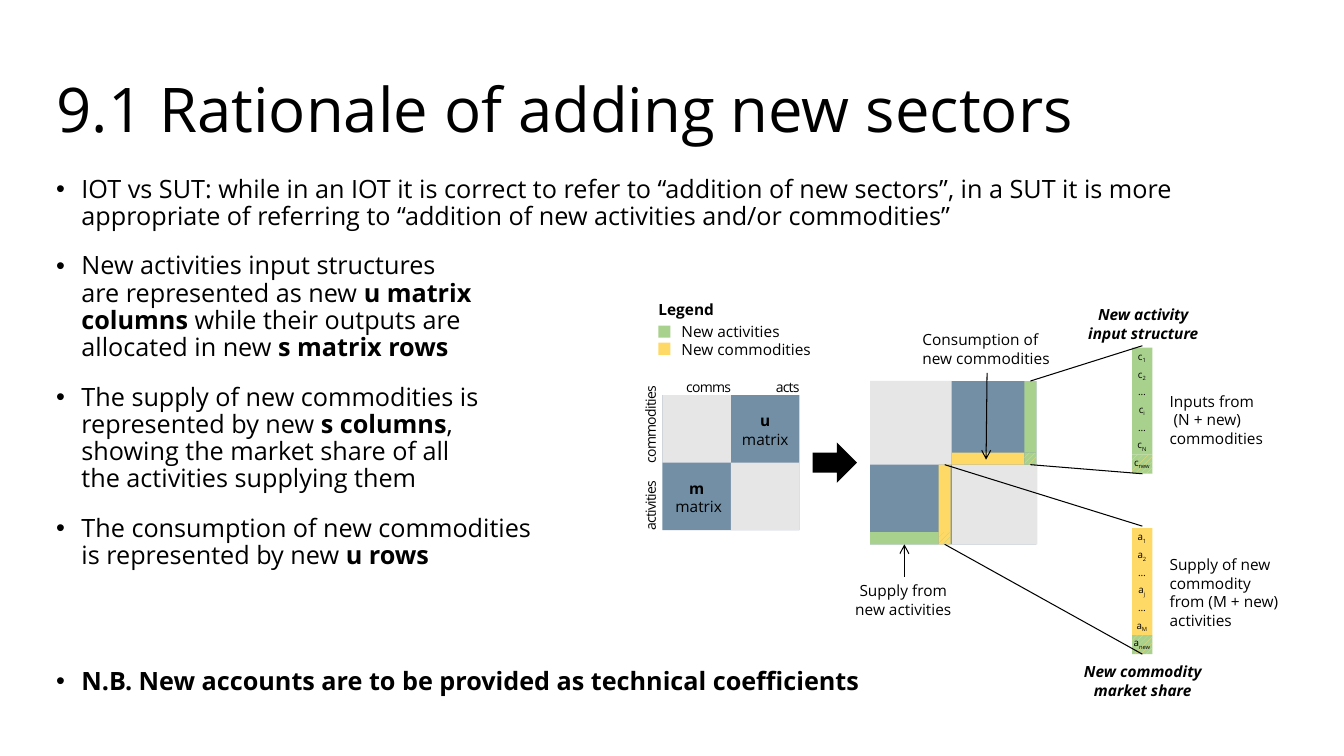
from copy import deepcopy
from dataclasses import dataclass

from lxml.etree import SubElement
from pptx import Presentation
from pptx.dml.color import RGBColor
from pptx.enum.dml import MSO_PATTERN
from pptx.enum.shapes import MSO_CONNECTOR, MSO_SHAPE
from pptx.enum.text import MSO_ANCHOR, MSO_AUTO_SIZE, PP_ALIGN
from pptx.oxml.ns import qn
from pptx.util import Inches, Pt


@dataclass(frozen=True)
class Theme:
    font: str = "Open Sans"
    black: str = "000000"
    blue: str = "728FA5"
    grey: str = "E7E6E6"
    green: str = "A9D18E"
    yellow: str = "FFD966"
    title: int = 44
    body: int = 18
    label: int = 11
    axis: int = 10
    cell: int = 7


@dataclass(frozen=True)
class Span:
    text: str
    bold: bool = False
    italic: bool = False
    subscript: bool = False


class SlideBuilder:
    def __init__(self, page, theme):
        self.page = page
        self.theme = theme

    def add_spans(self, paragraph, spans, size, tracking=None):
        for span in spans:
            for index, line in enumerate(span.text.split("\n")):
                if index:
                    paragraph.add_line_break()
                    line_break = paragraph._p.findall(qn("a:br"))[-1]
                    line_break.append(deepcopy(properties))
                if not line:
                    continue
                run = paragraph.add_run()
                run.text = line
                run.font.name = self.theme.font
                run.font.size = Pt(size)
                run.font.bold = span.bold
                run.font.italic = span.italic
                run.font.color.rgb = RGBColor.from_string(self.theme.black)
                properties = run._r.get_or_add_rPr()
                if span.subscript:
                    properties.set("baseline", "-25000")
                if tracking:
                    properties.set("spc", str(int(tracking * 100)))

    def title(self, text, left, top, width, height):
        box = self.page.shapes.title
        box.left, box.top = Inches(left), Inches(top)
        box.width, box.height = Inches(width), Inches(height)
        frame = box.text_frame
        frame.auto_size = MSO_AUTO_SIZE.NONE
        frame.vertical_anchor = MSO_ANCHOR.BOTTOM
        paragraph = frame.paragraphs[0]
        paragraph.alignment = PP_ALIGN.LEFT
        paragraph.line_spacing = 0.9
        self.add_spans(paragraph, [Span(text)], self.theme.title)

    def frame(self, left, top, width, height, insets=(0.1, 0.05, 0.1, 0.05), rotation=0):
        box = self.page.shapes.add_textbox(Inches(left), Inches(top), Inches(width), Inches(height))
        box.rotation = rotation
        frame = box.text_frame
        frame.word_wrap = True
        frame.margin_left, frame.margin_top, frame.margin_right, frame.margin_bottom = map(Inches, insets)
        return frame

    def label(self, spans, left, top, width, height, size=None, align=PP_ALIGN.LEFT, tracking=None, **layout):
        paragraph = self.frame(left, top, width, height, **layout).paragraphs[0]
        paragraph.alignment = align
        self.add_spans(paragraph, spans, size or self.theme.label, tracking)

    def axis_label(self, text, left, top, width, align=PP_ALIGN.LEFT, rotation=0):
        self.label([Span(text)], left, top, width, 0.17, self.theme.axis, align, -0.5,
                   insets=(0, 0, 0, 0), rotation=rotation)

    def bullets(self, items, left, top, width, height):
        frame = self.frame(left, top, width, height)
        for index, (space_before, spans) in enumerate(items):
            paragraph = frame.add_paragraph() if index else frame.paragraphs[0]
            properties = paragraph._p.get_or_add_pPr()
            properties.set("marL", str(Inches(0.25)))
            properties.set("indent", str(-Inches(0.25)))
            SubElement(properties, qn("a:buFont")).set("typeface", "Arial")
            SubElement(properties, qn("a:buChar")).set("char", "•")
            paragraph.line_spacing = 0.9
            paragraph.space_before = Pt(space_before)
            paragraph.space_after = Pt(6)
            self.add_spans(paragraph, spans, self.theme.body)

    def block(self, color, left, top, width, height, stripe=None, kind=MSO_SHAPE.RECTANGLE):
        shape = self.page.shapes.add_shape(kind, Inches(left), Inches(top), Inches(width), Inches(height))
        shape.shadow.inherit = False
        shape.line.fill.background()
        if stripe:
            shape.fill.patterned()
            shape.fill.pattern = MSO_PATTERN.WIDE_UPWARD_DIAGONAL
            shape.fill.fore_color.rgb = RGBColor.from_string(stripe)
            shape.fill.back_color.rgb = RGBColor.from_string(color)
        else:
            shape.fill.solid()
            shape.fill.fore_color.rgb = RGBColor.from_string(color)

    def line(self, start, end, arrow=False):
        connector = self.page.shapes.add_connector(MSO_CONNECTOR.STRAIGHT, *map(Inches, start + end))
        connector.line.color.rgb = RGBColor.from_string(self.theme.black)
        connector.line.width = Pt(0.75)
        properties = connector._element.spPr
        if arrow:
            SubElement(properties.find(qn("a:ln")), qn("a:tailEnd")).set("type", "arrow")
        SubElement(properties, qn("a:effectLst"))

    def vector(self, letter, subscripts, color, top):
        theme = self.theme
        self.block(color, 11.23, top + 0.02, 0.2, 1.06)
        self.block(theme.green, 11.23, top + 1.08, 0.2, 0.19, stripe=theme.yellow)
        step = 1.05 / (len(subscripts) - 1)
        for index, subscript in enumerate(subscripts):
            spans = [Span(letter), Span(subscript, subscript=True)] if subscript else [Span("…")]
            self.label(spans, 11.22, top + index * step, 0.21, 0.22, theme.cell, PP_ALIGN.CENTER,
                       insets=(0, 0.05, 0, 0.05))


def draw_text(slide):
    slide.title("9.1 Rationale of adding new sectors", 0.46, 0.01, 11.29, 1.49)
    slide.bullets([
        (0, [Span("IOT vs SUT: while in an IOT it is correct to refer to “addition of new sectors”, in a SUT "
                  "it is more appropriate of referring to “addition of new activities and/or commodities”")]),
        (10, [Span("New activities input structures\nare represented as new "), Span("u matrix\ncolumns", True),
              Span(" while their outputs are\nallocated in new "), Span("s matrix rows", True)]),
        (10, [Span("The supply of new commodities is\nrepresented by new "), Span("s columns", True),
              Span(",\nshowing the market share of all\nthe activities supplying them")]),
        (10, [Span("The consumption of new commodities\nis represented by new "), Span("u rows", True)]),
        (64, [Span("N.B. New accounts are to be provided as technical coefficients", True)]),
    ], 0.46, 1.7, 11.47, 5.42)


def draw_legend(slide):
    theme = slide.theme
    slide.label([Span("Legend", True)], 6.53, 2.93, 1.05, 0.29, insets=(0, 0.05, 0.1, 0.05))
    entries = [("New activities", theme.green), ("New commodities", theme.yellow)]
    for index, (name, color) in enumerate(entries):
        slide.label([Span(name)], 6.66, 3.15 + index * 0.17, 1.61, 0.29)
        slide.block(color, 6.53, 3.23 + index * 0.17, 0.12, 0.12)


def draw_matrices(slide):
    theme = slide.theme
    slide.block(theme.blue, 6.57, 3.92, 1.36, 1.34)
    slide.block(theme.grey, 6.57, 3.92, 0.68, 0.67)
    slide.block(theme.grey, 7.25, 4.59, 0.68, 0.67)
    slide.label([Span("u", True), Span("\nmatrix")], 7.23, 4.03, 0.72, 0.47, align=PP_ALIGN.CENTER)
    slide.label([Span("m", True), Span("\n matrix")], 6.55, 4.7, 0.72, 0.47, align=PP_ALIGN.CENTER,
                insets=(0, 0.05, 0, 0.05))
    slide.axis_label("activities", 6.14, 4.87, 0.62, rotation=270)
    slide.axis_label("commodities", 6.01, 4.07, 0.88, rotation=270)
    slide.axis_label("comms", 6.57, 3.76, 0.68, PP_ALIGN.RIGHT)
    slide.axis_label("acts", 7.25, 3.76, 0.68, PP_ALIGN.RIGHT)
    slide.block(theme.black, 8.06, 4.39, 0.44, 0.4, kind=MSO_SHAPE.RIGHT_ARROW)

    slide.block(theme.blue, 8.63, 3.78, 1.65, 1.62)
    slide.block(theme.grey, 8.63, 3.78, 0.81, 0.83)
    slide.block(theme.grey, 9.44, 4.61, 0.85, 0.79)
    slide.block(theme.yellow, 9.44, 4.49, 0.72, 0.12)
    slide.block(theme.yellow, 9.31, 4.61, 0.12, 0.67)
    slide.block(theme.green, 8.63, 5.28, 0.68, 0.12)
    slide.block(theme.yellow, 9.31, 5.28, 0.12, 0.12, stripe=theme.green)
    slide.block(theme.green, 10.16, 3.78, 0.12, 0.71)
    slide.block(theme.green, 10.16, 4.49, 0.12, 0.12, stripe=theme.yellow)


def draw_callouts(slide):
    slide.vector("c", ["1", "2", None, "i", None, "N", "new"], slide.theme.green, 3.43)
    slide.vector("a", ["1", "2", None, "j", None, "M", "new"], slide.theme.yellow, 5.22)
    slide.line((10.22, 3.78), (11.33, 3.43))
    slide.line((10.22, 4.61), (11.33, 4.7))
    slide.line((9.37, 4.61), (11.33, 5.22))
    slide.line((9.37, 5.4), (11.33, 6.49))
    slide.line((9.79, 3.7), (9.78, 4.56), arrow=True)
    slide.line((8.97, 5.72), (8.97, 5.4), arrow=True)
    center = PP_ALIGN.CENTER
    slide.label([Span("New activity\ninput structure", True, True)], 10.52, 2.98, 1.64, 0.47, align=center)
    slide.label([Span("New commodity market share", True, True)], 10.58, 6.52, 1.51, 0.47, align=center)
    slide.label([Span("Consumption of new commodities")], 9.05, 3.23, 1.49, 0.47)
    slide.label([Span("Supply from new activities")], 8.38, 5.72, 1.16, 0.47, align=center)
    side = (0.04, 0.05, 0.1, 0.05)
    slide.label([Span("Inputs from\n (N + new) commodities")], 11.56, 3.84, 1.25, 0.66, insets=side)
    slide.label([Span("Supply of new commodity from (M + new) activities")], 11.56, 5.46, 1.25, 0.84, insets=side)


deck = Presentation()
deck.slide_width, deck.slide_height = Inches(13.33), Inches(7.5)
slide = SlideBuilder(deck.slides.add_slide(deck.slide_layouts[5]), Theme())
for draw in (draw_text, draw_legend, draw_matrices, draw_callouts):
    draw(slide)
deck.save("out.pptx")
